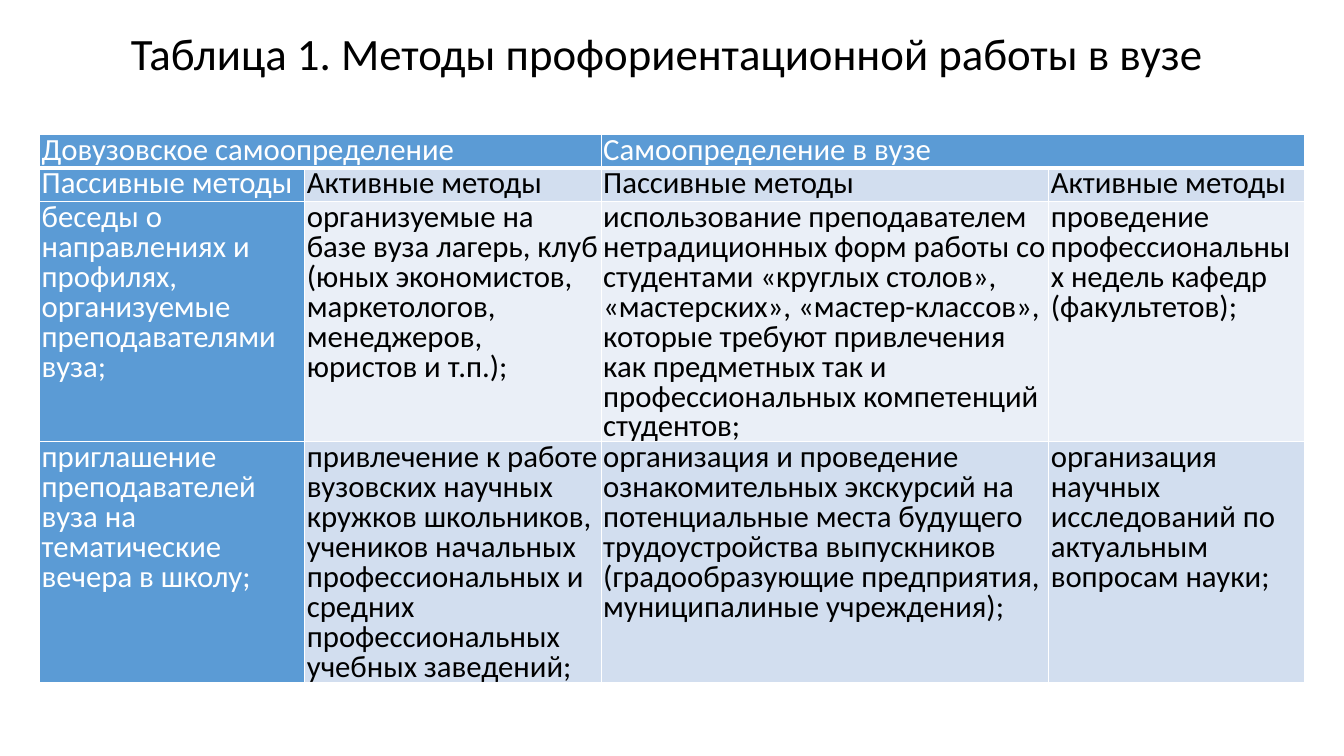
from lxml import etree
from pptx import Presentation
from pptx.dml.color import RGBColor
from pptx.enum import text as t
from pptx.oxml import ns
from pptx.util import Pt

WHITE = RGBColor(0xFF, 0xFF, 0xFF)
BLACK = RGBColor(0, 0, 0)
HEADER_BLUE = RGBColor(0x5B, 0x9B, 0xD5)
BAND_DARK = RGBColor(0xD2, 0xDE, 0xEF)
BAND_LIGHT = RGBColor(0xEA, 0xEF, 0xF7)
FONT = "Calibri"

TITLE = "Таблица 1. Методы профориентационной работы в вузе"
COLUMN_WIDTHS = [189.4, 211.7, 319.7, 182.9]
ROW_HEIGHTS = [24, 24, 171, 171]
METHODS = [
    ["Довузовское самоопределение", "", "Самоопределение в вузе", ""],
    ["Пассивные методы", "Активные методы"] * 2,
    [
        "беседы о направлениях и профилях, организуемые преподавателями вуза;",
        "организуемые на базе вуза лагерь, клуб (юных экономистов, "
        "маркетологов, менеджеров, юристов и т.п.);",
        "использование преподавателем нетрадиционных форм работы со "
        "студентами «круглых столов», «мастерских», «мастер-классов», "
        "которые требуют привлечения как предметных так и "
        "профессиональных компетенций студентов;",
        "проведение профессиональных недель кафедр (факультетов);",
    ],
    [
        "приглашение преподавателей вуза на тематические вечера в школу;",
        "привлечение к работе вузовских научных кружков школьников, "
        "учеников начальных профессиональных и средних "
        "профессиональных учебных заведений;",
        "организация и проведение ознакомительных экскурсий на "
        "потенциальные места будущего трудоустройства выпускников "
        "(градообразующие предприятия, муниципалиные учреждения);",
        "организация научных исследований по актуальным вопросам науки;",
    ],
]


def format_text(paragraph, size, color, spacing):
    paragraph.line_spacing = spacing
    for run in paragraph.runs:
        run.font.name = FONT
        run.font.size = Pt(size)
        run.font.bold = False
        run.font.color.rgb = color


def add_title(slide):
    title = slide.shapes.add_textbox(Pt(86.4), Pt(12.2), Pt(787.7), Pt(46.8))
    frame = title.text_frame
    frame.word_wrap = False
    frame.auto_size = t.MSO_AUTO_SIZE.SHAPE_TO_FIT_TEXT
    heading = frame.paragraphs[0]
    heading.text = TITLE
    heading.space_before = heading.space_after = Pt(12)
    format_text(heading, 32, BLACK, 1.07)


def set_borders(cell, bottom_width):
    properties = cell._tc.get_or_add_tcPr()
    for side, width in (("L", 1), ("R", 1), ("T", 1), ("B", bottom_width)):
        line = etree.SubElement(properties, ns.qn(f"a:ln{side}"), w=str(Pt(width)))
        fill = etree.SubElement(line, ns.qn("a:solidFill"))
        etree.SubElement(fill, ns.qn("a:srgbClr"), val=str(WHITE))


def format_cell(cell, words, row, column):
    is_header = row == 0 or column == 0
    # Borders precede the fill in the cell properties
    set_borders(cell, 3 if row == 0 else 1)
    cell.fill.solid()
    band = BAND_DARK if row % 2 else BAND_LIGHT
    cell.fill.fore_color.rgb = HEADER_BLUE if is_header else band
    cell.margin_left = cell.margin_right = Pt(1.44)
    cell.margin_top = cell.margin_bottom = Pt(1.44)
    if words:
        cell.text_frame.text = words
        format_text(cell.text_frame.paragraphs[0], 22,
                    WHITE if is_header else BLACK, 0.8)


def add_methods_table(slide):
    frame = slide.shapes.add_table(
        len(ROW_HEIGHTS), len(COLUMN_WIDTHS), Pt(28.4), Pt(95.8),
        Pt(sum(COLUMN_WIDTHS)), Pt(sum(ROW_HEIGHTS)))
    methods = frame.table
    for column, width in zip(methods.columns, COLUMN_WIDTHS):
        column.width = Pt(width)
    for row, height in zip(methods.rows, ROW_HEIGHTS):
        row.height = Pt(height)
    for r, row_words in enumerate(METHODS):
        for c, words in enumerate(row_words):
            format_cell(methods.cell(r, c), words, r, c)
    # Each stage heading covers its passive and active columns
    for c in (0, 2):
        methods.cell(0, c).merge(methods.cell(0, c + 1))


def main():
    deck = Presentation()
    deck.slide_width, deck.slide_height = Pt(960), Pt(540)
    slide = deck.slides.add_slide(deck.slide_layouts[6])
    add_title(slide)
    add_methods_table(slide)
    deck.save("out.pptx")


if __name__ == "__main__":
    main()
